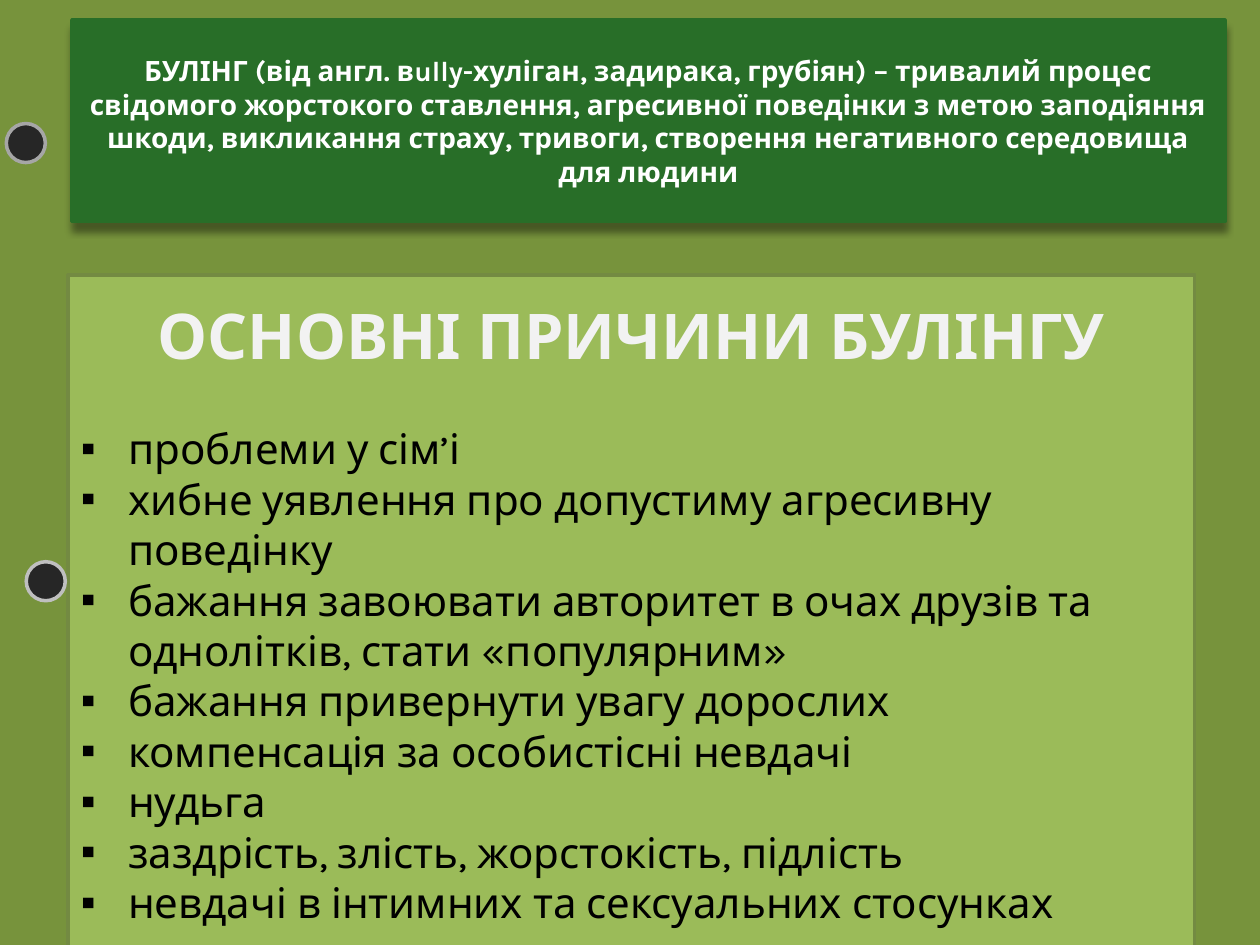
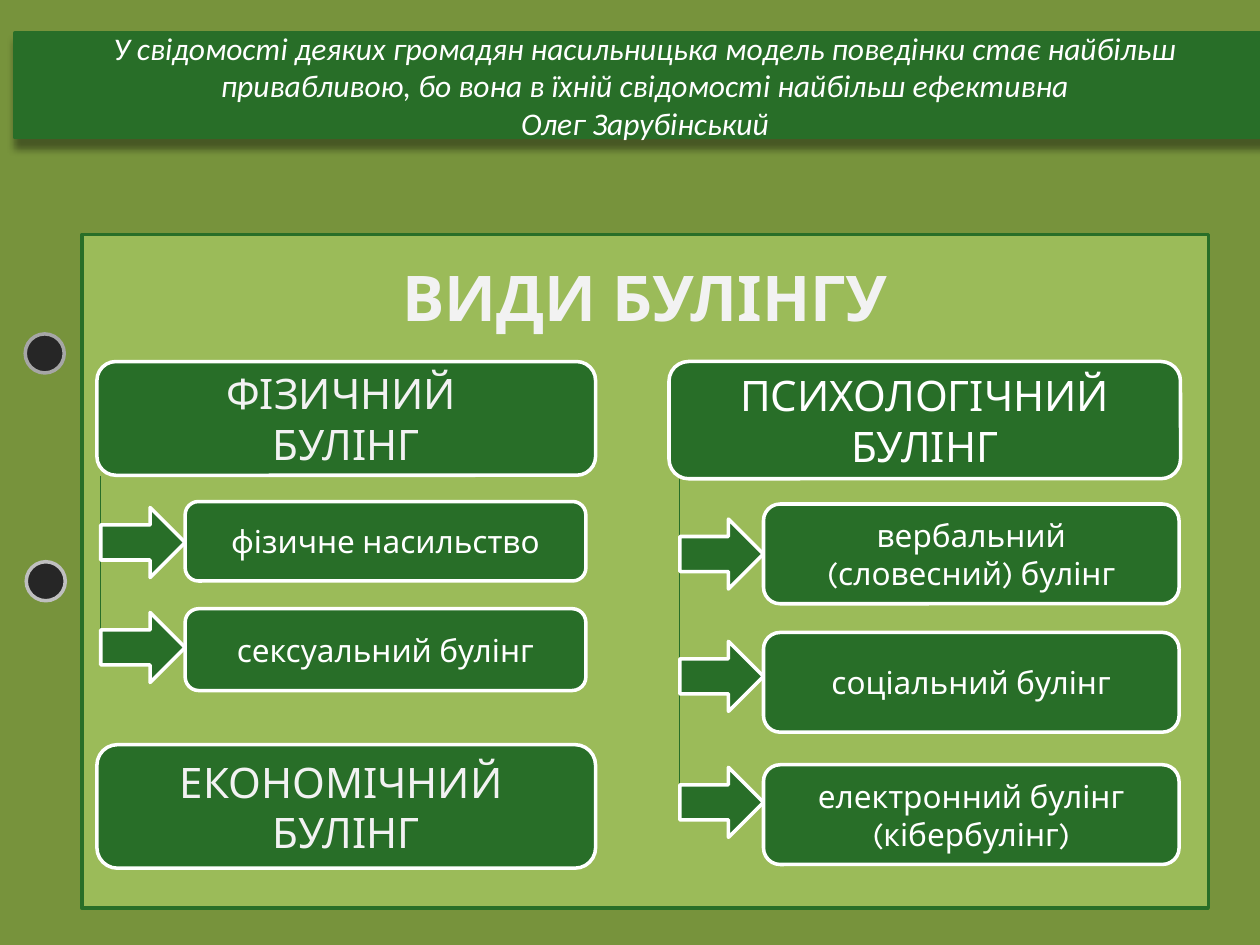
from dataclasses import dataclass
from typing import NamedTuple

from lxml.etree import SubElement
from pptx import Presentation
from pptx.dml.color import RGBColor
from pptx.enum.shapes import MSO_CONNECTOR, MSO_SHAPE as Preset
from pptx.enum.text import MSO_ANCHOR as Anchor, MSO_AUTO_SIZE, PP_ALIGN as Align
from pptx.oxml.ns import qn
from pptx.util import Pt

OLIVE = RGBColor(0x77, 0x93, 0x3C)
LIME = RGBColor(0x9B, 0xBB, 0x59)
LIME_EDGE = RGBColor(0x73, 0x8A, 0x42)
GREEN = RGBColor(0x28, 0x6E, 0x28)
CHARCOAL = RGBColor(0x26, 0x26, 0x26)
GREY = RGBColor(0xA6, 0xA6, 0xA6)
SILVER = RGBColor(0xBF, 0xBF, 0xBF)
OFF_WHITE = RGBColor(0xF2, 0xF2, 0xF2)
WHITE = RGBColor(0xFF, 0xFF, 0xFF)
BLACK = RGBColor(0, 0, 0)

DEFINITION = dict(name="Karla", size=Pt(16), bold=True)
QUOTE = dict(name="Calibri", size=Pt(18), italic=True)
HEADING = dict(name="Karla", size=Pt(36), bold=True)
CAUSE = dict(name="Karla", size=Pt(24), bold=False)
KIND = dict(name="Karla", size=Pt(24))
EXAMPLE = dict(name="Karla", size=Pt(18))

DOT_SIZE = 22.3
CAUSE_INDENT = 27
ARROW_HEIGHT = 40


class Box(NamedTuple):
    left: float
    top: float
    width: float
    height: float


class Dot(NamedTuple):
    left: float
    top: float
    edge: RGBColor


@dataclass
class Kind:
    text: str
    box: Box
    color: RGBColor = OFF_WHITE


@dataclass
class Example:
    text: str
    top: float
    height: float
    arrow_top: float


@dataclass
class Branch:
    """Examples hanging from a vertical stem under one kind."""
    stem_left: float
    stem_top: float
    stem_bottom: float
    examples_left: float
    examples_width: float
    examples: list[Example]


CAUSES = [
    "проблеми у сім’і",
    "хибне уявлення про допустиму агресивну поведінку",
    "бажання завоювати авторитет в очах друзів та однолітків, стати «популярним»",
    "бажання привернути увагу дорослих",
    "компенсація за особистісні невдачі",
    "нудьга",
    "заздрість, злість, жорстокість, підлість",
    "невдачі в інтимних та сексуальних стосунках",
]

KINDS = [
    Kind("ФІЗИЧНИЙ \nБУЛІНГ", Box(55.4, 206.6, 285, 65)),
    Kind("ПСИХОЛОГІЧНИЙ БУЛІНГ", Box(382.3, 206.6, 292.3, 67), WHITE),
    Kind("ЕКОНОМІЧНИЙ \nБУЛІНГ", Box(55.4, 425.5, 285, 70.6)),
]

BRANCHES = [
    Branch(57.6, 272, 379.4, 105.8, 229, [
        Example("фізичне насильство", 286.6, 45.4, 290),
        Example("сексуальний булінг", 347.8, 46.8, 350),
    ]),
    Branch(388.5, 273.6, 465, 436.3, 237.5, [
        Example("вербальний (словесний) булінг", 288, 57, 296.6),
        Example("соціальний булінг", 361.4, 57, 366.5),
        Example("електронний булінг (кібербулінг)", 437, 57, 438.5),
    ]),
]


def place(shape, box: Box) -> None:
    for side, length in box._asdict().items():
        setattr(shape, side, Pt(length))


def paint(shape, fill: RGBColor, edge: RGBColor) -> None:
    shape.fill.solid()
    shape.fill.fore_color.rgb = fill
    shape.line.color.rgb = edge
    shape.line.width = Pt(2)


def add_shadow(shape) -> None:
    effects = SubElement(shape._element.spPr, qn("a:effectLst"))
    shadow = SubElement(effects, qn("a:outerShdw"), blurRad=str(Pt(4)),
                        dist=str(Pt(5)), dir="5400000", rotWithShape="0")
    color = SubElement(shadow, qn("a:srgbClr"), val=str(BLACK))
    SubElement(color, qn("a:alpha"), val="40000")


def write(frame, text: str, style: dict, color: RGBColor,
          align: Align = Align.CENTER) -> list:
    """Fill the frame, or continue it, with one paragraph per line of text."""
    paragraphs = []
    for line in text.split("\n"):
        paragraph = frame.add_paragraph() if frame.text else frame.paragraphs[0]
        paragraph.alignment = align
        paragraph.space_before = Pt(0)
        run = paragraph.add_run()
        run.text = line
        for attribute, value in style.items():
            setattr(run.font, attribute, value)
        run.font.color.rgb = color
        paragraphs.append(paragraph)
    return paragraphs


def set_bullet(paragraph, indent: float, bullet: str = "") -> None:
    properties = paragraph._p.get_or_add_pPr()
    properties.set("marL", str(Pt(indent)))
    properties.set("indent", str(Pt(-indent)))
    if bullet:
        SubElement(properties, qn("a:buChar"), char=bullet)
    else:
        SubElement(properties, qn("a:buNone"))


def prepare_frame(shape, anchor: Anchor = Anchor.MIDDLE):
    frame = shape.text_frame
    frame.word_wrap = True
    frame.auto_size = MSO_AUTO_SIZE.NONE
    frame.vertical_anchor = anchor
    return frame


def add_preset(slide, preset: Preset, box: Box, fill: RGBColor, edge: RGBColor):
    shape = slide.shapes.add_shape(preset, *map(Pt, box))
    shape.shadow.inherit = False
    paint(shape, fill, edge)
    return shape


def set_band(slide, box: Box, text: str, style: dict) -> None:
    band = slide.shapes.title
    place(band, box)
    paint(band, GREEN, GREEN)
    add_shadow(band)
    write(prepare_frame(band), text, style, WHITE)


def set_panel(slide, box: Box, heading: str, edge: RGBColor, anchor: Anchor):
    panel = slide.placeholders[1]
    place(panel, box)
    paint(panel, LIME, edge)
    frame = prepare_frame(panel, anchor)
    title = write(frame, heading, HEADING, OFF_WHITE)[0]
    title.space_after = Pt(29)
    set_bullet(title, 0)
    return frame


def add_dots(slide, dots: list[Dot]) -> None:
    for dot in dots:
        add_preset(slide, Preset.OVAL, Box(dot.left, dot.top, DOT_SIZE, DOT_SIZE),
                   CHARCOAL, dot.edge)


def add_label(slide, box: Box, text: str, style: dict, color: RGBColor) -> None:
    label = add_preset(slide, Preset.ROUNDED_RECTANGLE, box, GREEN, WHITE)
    write(prepare_frame(label), text, style, color)


def add_branch(slide, branch: Branch) -> None:
    left = branch.stem_left
    stem = slide.shapes.add_connector(
        MSO_CONNECTOR.STRAIGHT, Pt(left), Pt(branch.stem_top),
        Pt(left), Pt(branch.stem_bottom))
    stem.line.color.rgb = GREEN
    stem.line.width = Pt(0.75)
    SubElement(stem._element.spPr, qn("a:effectLst"))
    for example in branch.examples:
        add_label(slide, Box(branch.examples_left, example.top,
                             branch.examples_width, example.height),
                  example.text, EXAMPLE, WHITE)
        add_preset(slide, Preset.RIGHT_ARROW,
                   Box(left, example.arrow_top, branch.examples_left - left,
                       ARROW_HEIGHT), GREEN, WHITE)


def build_causes(slide) -> None:
    set_band(slide, Box(41, 11.5, 659, 115),
             "БУЛІНГ (від англ. вully-хуліган, задирака, грубіян) – тривалий процес "
             "свідомого жорстокого ставлення, агресивної поведінки з метою заподіяння "
             "шкоди, викликання страху, тривоги, створення негативного середовища "
             "для людини", DEFINITION)
    add_dots(slide, [Dot(3.6, 70.6, GREY), Dot(15, 321, SILVER)])
    frame = set_panel(slide, Box(39, 157, 643.7, 385), "ОСНОВНІ ПРИЧИНИ БУЛІНГУ",
                      LIME_EDGE, Anchor.MIDDLE)
    for cause in write(frame, "\n".join(CAUSES), CAUSE, BLACK, Align.LEFT):
        set_bullet(cause, CAUSE_INDENT, "▪")


def build_kinds(slide) -> None:
    set_band(slide, Box(8.6, 18.7, 720, 60),
             "У свідомості деяких громадян насильницька модель поведінки стає "
             "найбільш привабливою, бо вона в їхній свідомості найбільш ефективна\n"
             "Олег Зарубінський", QUOTE)
    add_dots(slide, [Dot(14.4, 190.8, GREY), Dot(15, 321, SILVER)])
    frame = set_panel(slide, Box(46.8, 134, 643.7, 385), "ВИДИ БУЛІНГУ",
                      GREEN, Anchor.TOP)
    frame.margin_top = Pt(14)
    for kind in KINDS:
        add_label(slide, kind.box, kind.text, KIND, kind.color)
    for branch in BRANCHES:
        add_branch(slide, branch)


def main() -> None:
    deck = Presentation()
    deck.slide_width, deck.slide_height = Pt(720), Pt(540)
    background = deck.slide_master.background.fill
    background.solid()
    background.fore_color.rgb = OLIVE
    for build in (build_causes, build_kinds):
        build(deck.slides.add_slide(deck.slide_layouts[1]))
    deck.save("out.pptx")


if __name__ == "__main__":
    main()
